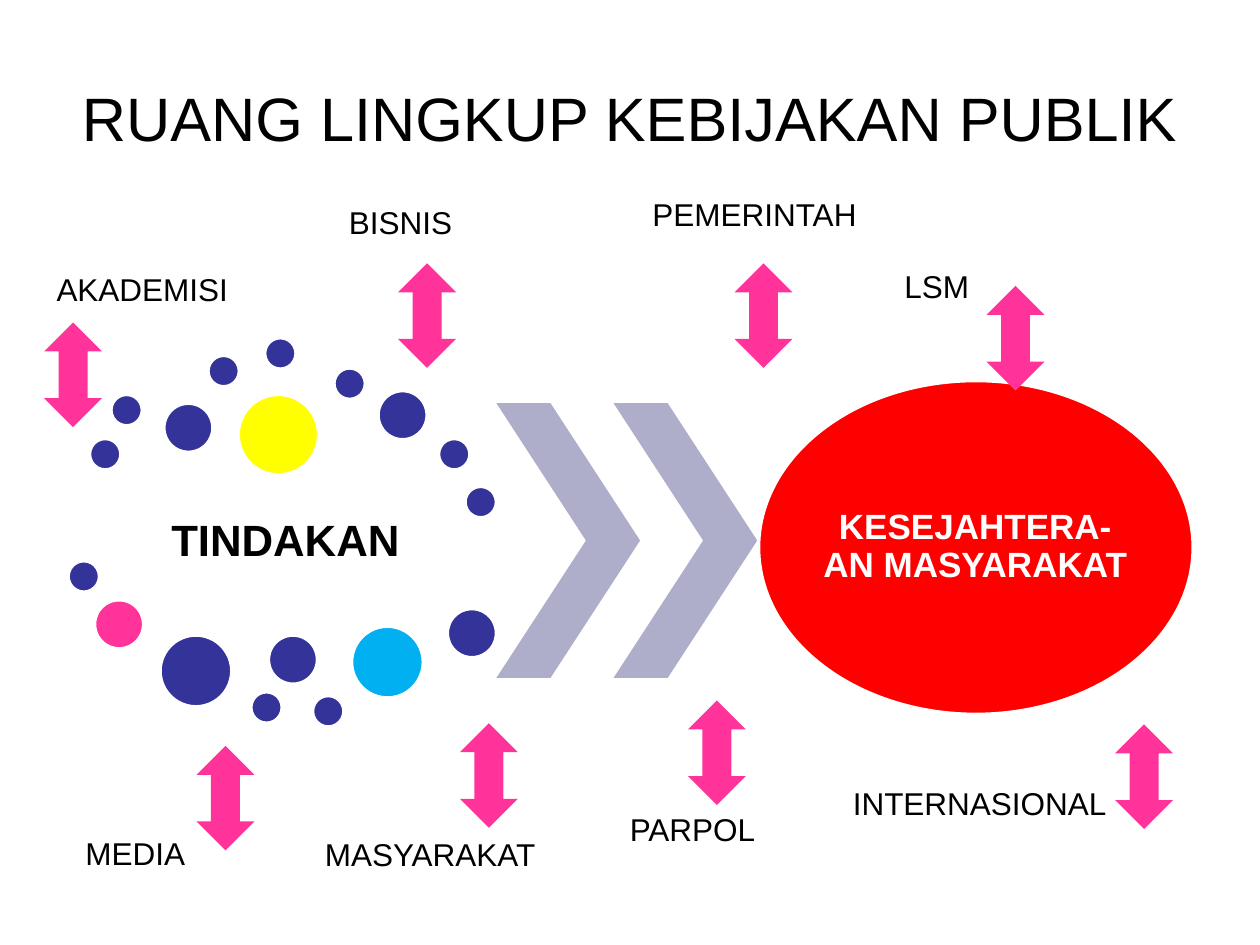
from typing import NamedTuple

from pptx import Presentation
from pptx.dml.color import RGBColor
from pptx.enum.shapes import MSO_SHAPE
from pptx.enum.text import MSO_ANCHOR, PP_ALIGN
from pptx.util import Inches, Pt

OVAL = MSO_SHAPE.OVAL
CHEVRON = MSO_SHAPE.CHEVRON
DOUBLE_ARROW = MSO_SHAPE.UP_DOWN_ARROW
MIDDLE, TOP = MSO_ANCHOR.MIDDLE, MSO_ANCHOR.TOP
CENTER, LEFT = PP_ALIGN.CENTER, PP_ALIGN.LEFT

NAVY, PINK, YELLOW, SKY = "333399", "FF3399", "FFFF00", "00B0F0"
LAVENDER, RED, WHITE, BLACK = "AEAECA", "FF0000", "FFFFFF", "000000"
SMALL, MEDIUM, LARGE, HUGE = 0.25, 0.39, 0.57, 0.64


class Box(NamedTuple):
    left: float
    top: float
    width: float
    height: float


class Dot(NamedTuple):
    left: float
    top: float
    size: float = SMALL
    color: str = NAVY


class Actor(NamedTuple):
    """A stakeholder label and the double arrow beside it."""
    name: str
    left: float
    top: float
    arrow_left: float
    arrow_top: float


DOTS = [
    Dot(0.71, 3.48), Dot(0.88, 3.13), Dot(1.3, 3.2, MEDIUM),
    Dot(1.65, 2.82), Dot(2.1, 2.68), Dot(2.65, 2.92),
    Dot(3, 3.1, MEDIUM), Dot(3.48, 3.48), Dot(3.69, 3.86),
    Dot(1.89, 3.13, HUGE, YELLOW), Dot(0.54, 4.45),
    Dot(0.75, 4.76, MEDIUM, PINK), Dot(1.27, 5.04, LARGE),
    Dot(1.99, 5.49), Dot(2.13, 5.04, MEDIUM), Dot(2.48, 5.52),
    Dot(2.79, 4.97, LARGE, SKY), Dot(3.55, 4.83, MEDIUM),
]

ACTORS = [
    Actor("PEMERINTAH", 5.08, 1.5, 5.83, 2.09),
    Actor("BISNIS", 2.67, 1.56, 3.16, 2.09),
    Actor("LSM", 7.08, 2.07, 7.83, 2.27),
    Actor("PARPOL", 4.9, 6.38, 5.46, 5.56),
    Actor("MEDIA", 0.58, 6.57, 1.56, 5.92),
    Actor("INTERNASIONAL", 6.67, 6.17, 8.85, 5.75),
    Actor("MASYARAKAT", 2.48, 6.58, 3.65, 5.74),
    Actor("AKADEMISI", 0.35, 2.09, 0.35, 2.56),
]


def rgb(color: str) -> RGBColor:
    return RGBColor.from_string(color)


def add_figure(slide, kind, box: Box, color: str, outlined: bool = False):
    figure = slide.shapes.add_shape(kind, *map(Inches, box))
    figure.shadow.inherit = False
    figure.fill.solid()
    figure.fill.fore_color.rgb = rgb(color)
    if outlined:
        figure.line.color.rgb = rgb(WHITE)
        figure.line.width = Pt(2)
    else:
        figure.line.fill.background()
    return figure


def add_text(slide, text: str, box: Box, size: float, color: str = BLACK,
             bold: bool = False, align=CENTER, anchor=MIDDLE,
             inset: float | None = None, spacing: float = 1.0) -> None:
    frame = slide.shapes.add_textbox(*map(Inches, box)).text_frame
    frame.word_wrap = True
    frame.vertical_anchor = anchor
    if inset is not None:
        frame.margin_left = frame.margin_right = Inches(inset)
        frame.margin_top = frame.margin_bottom = Inches(inset)
    paragraph = frame.paragraphs[0]
    paragraph.text = text
    paragraph.alignment = align
    paragraph.line_spacing = spacing
    font = paragraph.font
    font.name, font.size, font.bold = "Arial", Pt(size), bold
    font.color.rgb = rgb(color)


def main() -> None:
    prs = Presentation()
    prs.slide_width, prs.slide_height = Inches(10), Inches(7.5)
    slide = prs.slides.add_slide(prs.slide_layouts[6])

    add_text(slide, "RUANG LINGKUP KEBIJAKAN PUBLIK", Box(0.5, 0.3, 9, 1.25), 35)

    add_text(slide, "TINDAKAN", Box(0.71, 3.79, 3.11, 1.03), 25,
             bold=True, inset=0.03, spacing=0.9)
    for dot in DOTS:
        add_figure(slide, OVAL, Box(dot.left, dot.top, dot.size, dot.size),
                   dot.color, outlined=True)

    for left in (3.94, 4.87):
        chevron = add_figure(slide, CHEVRON, Box(left, 3.2, 1.14, 2.18), LAVENDER)
        chevron.adjustments[0] = 0.623

    add_figure(slide, OVAL, Box(6.02, 3.02, 3.45, 2.65), RED, outlined=True)
    add_text(slide, "KESEJAHTERA-AN MASYARAKAT", Box(6.52, 3.41, 2.44, 1.87), 20,
             WHITE, bold=True, inset=0, spacing=0.9)

    for actor in ACTORS:
        add_text(slide, actor.name, Box(actor.left, actor.top, 2.42, 0.4), 18,
                 align=LEFT, anchor=TOP)
        add_figure(slide, DOUBLE_ARROW,
                   Box(actor.arrow_left, actor.arrow_top, 0.46, 0.83), PINK)

    prs.save("out.pptx")


if __name__ == "__main__":
    main()
